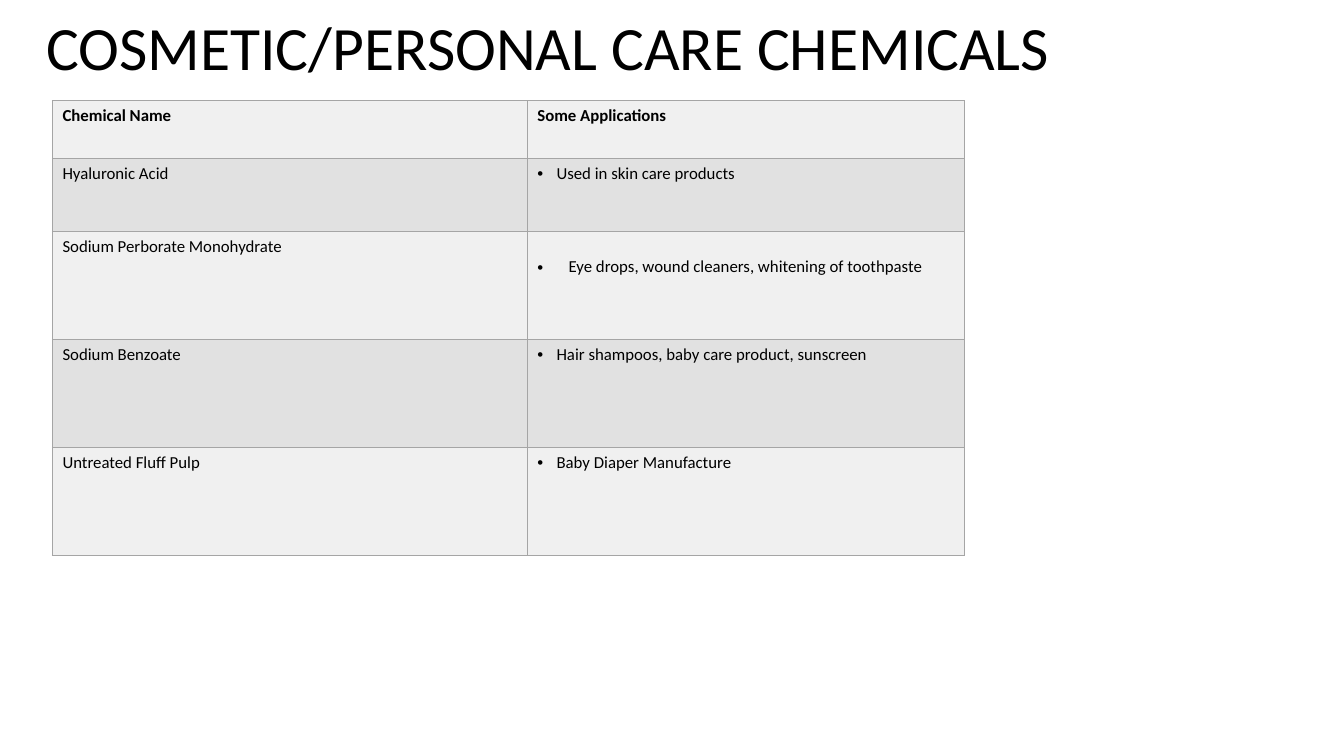
import pptx
import pptx.dml.color
import pptx.enum.text
import pptx.oxml
import pptx.oxml.ns
import pptx.util

Inches = pptx.util.Inches
Pt = pptx.util.Pt
RGBColor = pptx.dml.color.RGBColor

BLACK = RGBColor(0x00, 0x00, 0x00)
LIGHT_BAND = RGBColor(0xF0, 0xF0, 0xF0)
DARK_BAND = RGBColor(0xE1, 0xE1, 0xE1)
BORDER = RGBColor(0xA5, 0xA5, 0xA5)
FONT = "Calibri"

HEADINGS = ("Chemical Name", "Some Applications")
CHEMICALS = [
    ("Hyaluronic Acid", "Used in skin care products"),
    ("Sodium Perborate Monohydrate", "Eye drops, wound cleaners, whitening of toothpaste"),
    ("Sodium Benzoate", "Hair shampoos, baby care product, sunscreen"),
    ("Untreated Fluff Pulp", "Baby Diaper Manufacture"),
]
LOWERED_ROW = 2
COLUMN_WIDTHS = (4.71, 4.34)
ROW_HEIGHTS = (0.57, 0.73, 1.07, 1.07, 1.07)


def style_font(font, size, bold=False):
    """Apply the slide's typeface in black at the given size."""
    font.name = FONT
    font.size = Pt(size)
    font.bold = bold
    font.color.rgb = BLACK


def add_bullet(paragraph, indent):
    """Give a paragraph a round bullet with a hanging indent in inches."""
    properties = paragraph._p.get_or_add_pPr()
    properties.set("marL", str(Inches(indent)))
    properties.set("indent", str(-Inches(indent)))
    namespace = pptx.oxml.ns.nsdecls("a")
    properties.append(pptx.oxml.parse_xml(f'<a:buFont {namespace} typeface="Arial"/>'))
    properties.append(pptx.oxml.parse_xml(f'<a:buChar {namespace} char="•"/>'))


def outline_cell(cell):
    """Draw a thin grey border on all four sides of a cell."""
    properties = cell._tc.get_or_add_tcPr()
    for position, side in enumerate(("lnL", "lnR", "lnT", "lnB")):
        properties.insert(position, pptx.oxml.parse_xml(
            f'<a:{side} {pptx.oxml.ns.nsdecls("a")} w="{Pt(1)}"><a:solidFill>'
            f'<a:srgbClr val="{BORDER}"/></a:solidFill></a:{side}>'))


def place_title(slide, left, top, width, height):
    """Place the slide heading in the title placeholder."""
    title = slide.shapes.title
    title.left, title.top = Inches(left), Inches(top)
    title.width, title.height = Inches(width), Inches(height)
    frame = title.text_frame
    frame.text = "COSMETIC/PERSONAL CARE CHEMICALS"
    frame.word_wrap = True
    frame.auto_size = pptx.enum.text.MSO_AUTO_SIZE.NONE
    frame.vertical_anchor = pptx.enum.text.MSO_ANCHOR.MIDDLE
    heading = frame.paragraphs[0]
    heading.alignment = pptx.enum.text.PP_ALIGN.LEFT
    heading.line_spacing = 0.9
    style_font(heading.runs[0].font, 44)


def place_chemicals(slide, left, top, width, height):
    """Place the table of chemicals and their applications."""
    entries = [HEADINGS] + CHEMICALS
    table = slide.shapes.add_table(
        len(entries), len(HEADINGS),
        Inches(left), Inches(top), Inches(width), Inches(height)).table
    for column, column_width in zip(table.columns, COLUMN_WIDTHS):
        column.width = Inches(column_width)
    for row, row_height in zip(table.rows, ROW_HEIGHTS):
        row.height = Inches(row_height)
    for row_index, entry in enumerate(entries):
        for column_index, wording in enumerate(entry):
            cell = table.cell(row_index, column_index)
            cell.fill.solid()
            cell.fill.fore_color.rgb = DARK_BAND if row_index % 2 else LIGHT_BAND
            outline_cell(cell)
            cell.text_frame.text = wording
            paragraph = cell.text_frame.paragraphs[0]
            if row_index and column_index:
                lowered = row_index == LOWERED_ROW
                add_bullet(paragraph, 0.31 if lowered else 0.19)
                if lowered:
                    cell.margin_top = Inches(0.25)
            style_font(paragraph.runs[0].font, 12, bold=row_index == 0)


def main():
    """Build and save the slide."""
    presentation = pptx.Presentation()
    presentation.slide_width = Inches(13.33)
    presentation.slide_height = Inches(7.5)
    slide = presentation.slides.add_slide(presentation.slide_layouts[5])
    place_title(slide, 0.36, 0, 11.5, 1)
    place_chemicals(slide, 0.52, 1, sum(COLUMN_WIDTHS), sum(ROW_HEIGHTS))
    presentation.save("out.pptx")


if __name__ == "__main__":
    main()
